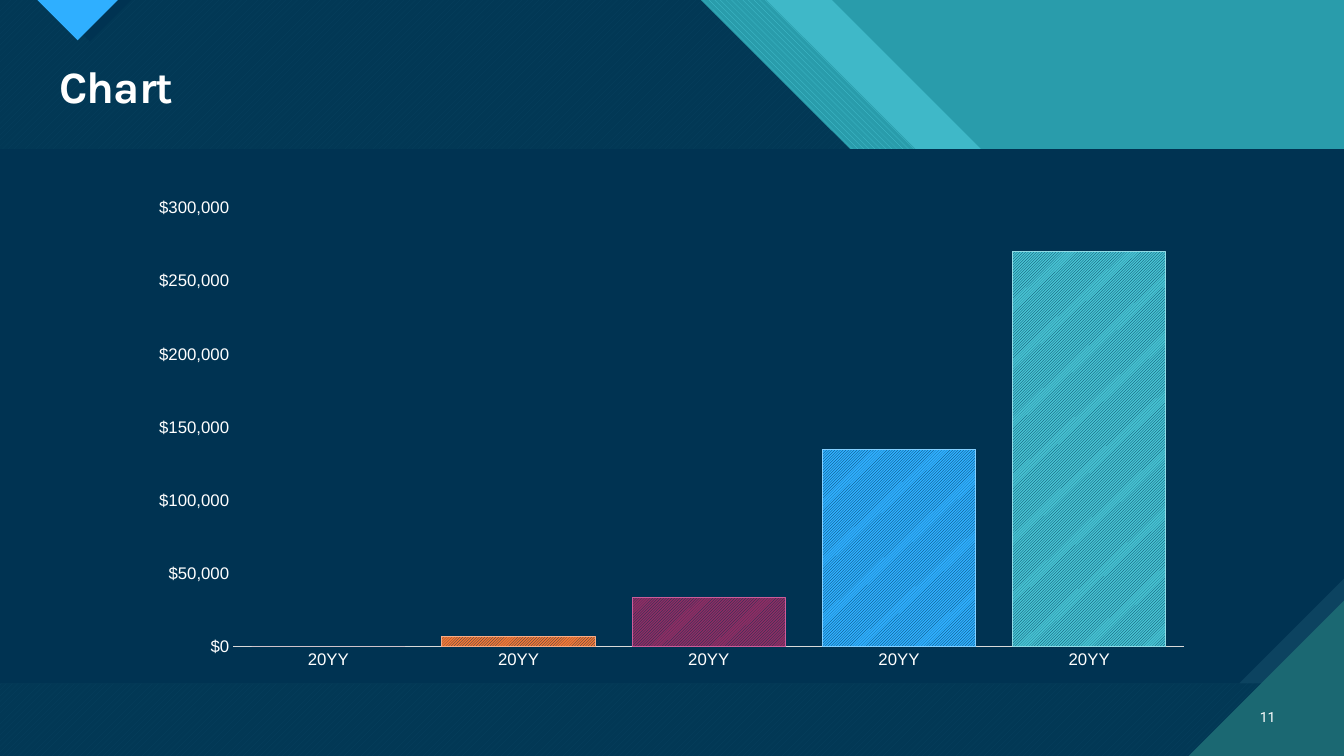
"""Build a dark slide with slanted teal bands and a yearly column chart."""
from dataclasses import dataclass
from typing import Optional

from lxml.etree import SubElement
from pptx import Presentation
from pptx.chart.data import CategoryChartData as ChartData
from pptx.dml.color import RGBColor
from pptx.dml.fill import FillFormat
from pptx.enum.chart import XL_CHART_TYPE as Kind, XL_TICK_MARK as Tick
from pptx.enum.dml import MSO_PATTERN_TYPE as Pattern
from pptx.enum.shapes import MSO_SHAPE as Shape
from pptx.enum.text import MSO_ANCHOR as Anchor, MSO_AUTO_SIZE as Fit, PP_ALIGN as Align
from pptx.oxml import parse_xml
from pptx.oxml.ns import nsdecls, qn
from pptx.util import Inches, Pt

WHITE = RGBColor(0xFF, 0xFF, 0xFF)
NAVY = RGBColor(0x00, 0x33, 0x52)
STEEL = RGBColor(0x0C, 0x43, 0x60)
SKY = RGBColor(0x2F, 0xAF, 0xFF)
AQUA = RGBColor(0x47, 0xC3, 0xD3)
TEAL = RGBColor(0x29, 0x9C, 0xAB)
PINE = RGBColor(0x1B, 0x68, 0x72)
PLUM = RGBColor(0x8F, 0x2D, 0x63)
ORANGE = RGBColor(0xF4, 0x77, 0x35)
GREY = RGBColor(0xD9, 0xD9, 0xD9)
PEACH = RGBColor(0xF8, 0xAD, 0x86)
PINK = RGBColor(0xCB, 0x5C, 0x9A)
PALE = RGBColor(0x82, 0xCF, 0xFF)
MINT = RGBColor(0x91, 0xDB, 0xE5)

WIDE, HIGH = 13.33, 7.5
Points = list[tuple[float, float]]


@dataclass
class Paint:
    color: RGBColor
    back: Optional[RGBColor] = None
    pattern: Optional[Pattern] = None
    alpha: int = 100


@dataclass
class Area:
    points: Points
    paint: Paint


@dataclass
class Bar:
    value: int
    color: RGBColor
    edge: RGBColor


def slant(left: float) -> Points:
    """Outline everything left of a stepped diagonal that starts at the top."""
    step = 2.97
    return [(0, 0), (left, 0), (left + step, step), (left + 4.23, step),
            (WIDE, WIDE - left - 1.26), (WIDE, HIGH), (0, HIGH)]


def panel(cut: float) -> Points:
    """Outline the content panel with its lower right corner cut."""
    top, base = 1.48, 6.78
    return [(0, top), (WIDE, top), (WIDE, base - cut), (WIDE - cut, base), (0, base)]


def wedge(left: float, half: float) -> Points:
    """Outline a triangle that points down from the top edge."""
    return [(left, 0), (left + 2 * half, 0), (left + half, half)]


AREAS = [
    Area([(0, 0), (WIDE, 0), (WIDE, HIGH), (0, HIGH)], Paint(TEAL)),
    Area(slant(8.25), Paint(AQUA, alpha=74)),
    Area(slant(7.6), Paint(AQUA, TEAL, Pattern.WIDE_DOWNWARD_DIAGONAL)),
    Area(slant(6.95), Paint(AQUA, PINE, Pattern.WIDE_UPWARD_DIAGONAL)),
    Area(slant(6.95), Paint(NAVY, alpha=90)),
    Area(wedge(0.48, 0.41), Paint(NAVY)),
    Area(wedge(0.37, 0.4), Paint(SKY)),
    Area(panel(0), Paint(STEEL)),
    Area(panel(1.04), Paint(NAVY)),
    Area([(11.79, HIGH), (WIDE, HIGH), (WIDE, 5.96)], Paint(PINE)),
]

BARS = [
    Bar(0, PLUM, PINK),
    Bar(7000, ORANGE, PEACH),
    Bar(34000, PLUM, PINK),
    Bar(135000, SKY, PALE),
    Bar(270000, AQUA, MINT),
]


def coat(fill: FillFormat, paint: Paint) -> None:
    """Apply a solid or patterned paint to a fill."""
    if paint.pattern is None:
        fill.solid()
        fill.fore_color.rgb = paint.color
    else:
        fill.patterned()
        fill.pattern = paint.pattern
        fill.fore_color.rgb = paint.color
        fill.back_color.rgb = paint.back


def draw_area(slide, area: Area) -> None:
    """Draw one borderless area of the backdrop."""
    spots = [(Inches(x), Inches(y)) for x, y in area.points]
    pen = slide.shapes.build_freeform(*spots[0])
    pen.add_line_segments(spots[1:], close=True)
    shape = pen.convert_to_shape()
    shape.shadow.inherit = False
    coat(shape.fill, area.paint)
    shape.line.fill.background()
    if area.paint.alpha < 100:
        tone = shape.element.spPr.find(".//" + qn("a:srgbClr"))
        SubElement(tone, qn("a:alpha"), val=str(area.paint.alpha * 1000))


def add_run(para, text: str, face: str, size: int, bold: bool = False):
    """Add one white run to a paragraph."""
    run = para.add_run()
    run.text = text
    run.font.name = face
    run.font.size = Pt(size)
    run.font.bold = bold
    run.font.color.rgb = WHITE
    return run


def set_title(slide) -> None:
    """Place the title in front of the backdrop and format it."""
    title = slide.shapes.title
    title.element.getparent().append(title.element)
    title.left, title.top = Inches(0.49), Inches(0.59)
    title.width, title.height = Inches(12.26), Inches(0.59)
    frame = title.text_frame
    frame.auto_size = Fit.NONE
    frame.vertical_anchor = Anchor.MIDDLE
    para = frame.paragraphs[0]
    para.alignment = Align.LEFT
    para.line_spacing = 0.9
    run = add_run(para, "Chart", "Karla", 32, True)
    run.font._element.set("spc", "-70")


def style_axis(axis) -> None:
    """Give an axis white labels and no ticks or grid."""
    axis.has_major_gridlines = False
    axis.major_tick_mark = axis.minor_tick_mark = Tick.NONE
    font = axis.tick_labels.font
    font.name, font.size = "Arial", Pt(12)
    font.color.rgb = WHITE


def add_bars(slide) -> None:
    """Add the column chart with one hatched colour per year."""
    data = ChartData(number_format="General")
    data.categories = ["20YY"] * len(BARS)
    data.add_series("Series 1", [bar.value for bar in BARS])
    chart = slide.shapes.add_chart(
        Kind.COLUMN_CLUSTERED, Inches(1.37), Inches(1.87),
        Inches(10.6), Inches(4.86), data).chart
    chart.has_legend = chart.has_title = False
    chart.font.name, chart.font.size = "Arial", Pt(10)
    years, money = chart.category_axis, chart.value_axis
    style_axis(years)
    years.format.line.color.rgb = GREY
    years.format.line.width = Pt(0.75)
    style_axis(money)
    money.format.line.fill.background()
    money.minimum_scale, money.maximum_scale = 0, 300000
    money.major_unit = 50000
    money.tick_labels.number_format = "[$$-409]#,##0"
    money.tick_labels.number_format_is_linked = False
    plot = chart.plots[0]
    plot.gap_width = 24
    plot.vary_by_categories = False
    series = plot.series[0]
    coat(series.format.fill, Paint(PLUM))
    for place, bar in enumerate(BARS):
        if bar.value:
            form = series.points[place].format
            coat(form.fill, Paint(NAVY, bar.color, Pattern.LIGHT_UPWARD_DIAGONAL))
            form.line.color.rgb = bar.edge
            form.line.width = Pt(0.75)
    grid = chart._chartSpace.find(".//" + qn("c:plotArea"))
    for old in grid.findall(qn("c:layout")):
        grid.remove(old)
    sides = "".join(f'<c:{tag} val="{val}"/>' for tag, val in [
        ("layoutTarget", "inner"), ("xMode", "edge"), ("yMode", "edge"),
        ("x", 0.089), ("y", 0.04), ("w", 0.89), ("h", 0.896)])
    grid.insert(0, parse_xml(
        f'<c:layout {nsdecls("c")}><c:manualLayout>{sides}</c:manualLayout></c:layout>'))


def add_page(slide) -> None:
    """Add the page number in the corner."""
    box = slide.shapes.add_textbox(Inches(12.31), Inches(6.91), Inches(0.44), Inches(0.4))
    frame = box.text_frame
    frame.word_wrap = True
    frame.vertical_anchor = Anchor.MIDDLE
    para = frame.paragraphs[0]
    para.alignment = Align.RIGHT
    add_run(para, "11", "Roboto", 10)


def main() -> None:
    """Build and save the slide."""
    deck = Presentation()
    deck.slide_width, deck.slide_height = Inches(WIDE), Inches(HIGH)
    slide = deck.slides.add_slide(deck.slide_layouts[5])
    coat(slide.background.fill, Paint(AQUA))
    for area in AREAS:
        draw_area(slide, area)
    set_title(slide)
    add_bars(slide)
    add_page(slide)
    deck.save("out.pptx")


if __name__ == "__main__":
    main()
